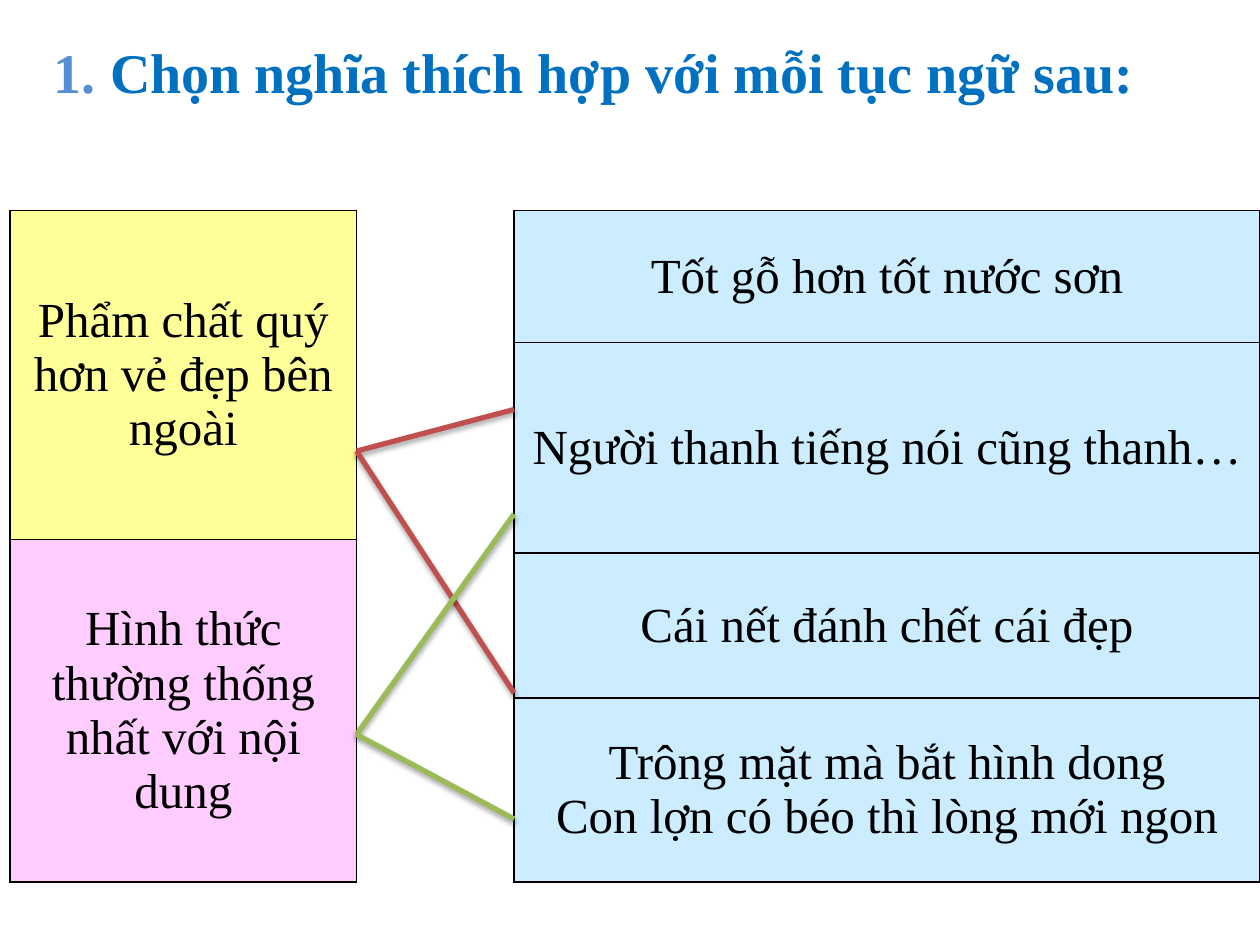
from dataclasses import dataclass

from lxml.etree import SubElement
from pptx import Presentation
from pptx.dml.color import RGBColor
from pptx.enum.shapes import MSO_CONNECTOR as Connector
from pptx.enum.text import MSO_ANCHOR as Anchor, PP_ALIGN as Align
from pptx.oxml import parse_xml
from pptx.oxml.ns import nsdecls, qn
from pptx.util import Inches, Pt


@dataclass(frozen=True)
class Theme:
    """Colours, font and type sizes of the slide."""
    font: str = "Times New Roman"
    title_size: int = 32
    cell_size: int = 28
    number: str = "558ED5"
    title: str = "0070C0"
    ink: str = "000000"
    quality: str = "FFFF99"
    form: str = "FFCCFF"
    proverb: str = "CCECFF"
    quality_line: str = "C0504D"
    form_line: str = "9BBB59"
    border_width: float = 1
    line_width: float = 3


THEME = Theme()
TABLE_TOP = 1.67
MEANING_LEFT, MEANING_WIDTH = 0.08, 2.75
PROVERB_LEFT, PROVERB_WIDTH = 4.08, 5.92

MEANINGS = [
    ("Phẩm chất quý hơn vẻ đẹp bên ngoài", 2.61, THEME.quality),
    ("Hình thức thường thống nhất với nội dung", 2.72, THEME.form),
]
PROVERBS = [
    ("Tốt gỗ hơn tốt nước sơn", 1.05, THEME.proverb),
    ("Người thanh tiếng nói cũng thanh…", 1.67, THEME.proverb),
    ("Cái nết đánh chết cái đẹp", 1.15, THEME.proverb),
    ("Trông mặt mà bắt hình dong\nCon lợn có béo thì lòng mới ngon", 1.46, THEME.proverb),
]
MATCHES = [
    (3.58, (3.25, 5.5), THEME.quality_line),
    (5.83, (4.08, 6.5), THEME.form_line),
]


def style_run(run, size, color, bold=False):
    """Give a run its font, size, colour and weight."""
    run.font.name = THEME.font
    run.font.size = Pt(size)
    run.font.bold = bold
    run.font.color.rgb = RGBColor.from_string(color)


def add_borders(cell):
    """Draw a thin line on each side of a table cell."""
    properties = cell._tc.get_or_add_tcPr()
    for index, side in enumerate(("lnL", "lnR", "lnT", "lnB")):
        border = parse_xml(
            f'<a:{side} {nsdecls("a")} w="{Pt(THEME.border_width)}"><a:solidFill>'
            f'<a:srgbClr val="{THEME.ink}"/></a:solidFill></a:{side}>')
        properties.insert(index, border)


def add_column(slide, left, width, rows):
    """Add a one-column table from (text, height, fill) rows."""
    total = sum(height for _, height, _ in rows)
    frame = slide.shapes.add_table(
        len(rows), 1, Inches(left), Inches(TABLE_TOP), Inches(width), Inches(total))
    table = frame.table
    table.first_row = table.horz_banding = False
    for index, (text, height, fill) in enumerate(rows):
        table.rows[index].height = Inches(height)
        cell = table.cell(index, 0)
        cell.text_frame.text = text
        cell.vertical_anchor = Anchor.MIDDLE
        cell.fill.solid()
        cell.fill.fore_color.rgb = RGBColor.from_string(fill)
        add_borders(cell)
        for paragraph in cell.text_frame.paragraphs:
            paragraph.alignment = Align.CENTER
            for run in paragraph.runs:
                style_run(run, THEME.cell_size, THEME.ink)


def add_title(slide):
    """Add the numbered question above the tables."""
    shape = slide.shapes.add_textbox(Inches(0.33), Inches(0.25), Inches(8.89), Inches(2.17))
    shape.text_frame.word_wrap = True
    paragraph = shape.text_frame.paragraphs[0]
    paragraph.space_before = Pt(3.6)
    for text, color in (("1. ", THEME.number),
                        ("Chọn nghĩa thích hợp với mỗi tục ngữ sau:", THEME.title)):
        run = paragraph.add_run()
        run.text = text
        style_run(run, THEME.title_size, color, bold=True)


def add_match(slide, start_y, end_y, color):
    """Join a meaning to a proverb with a softly shadowed line."""
    line = slide.shapes.add_connector(
        Connector.STRAIGHT, Inches(MEANING_LEFT + MEANING_WIDTH), Inches(start_y),
        Inches(PROVERB_LEFT), Inches(end_y))
    line.line.width = Pt(THEME.line_width)
    line.line.color.rgb = RGBColor.from_string(color)
    effects = SubElement(line._element.spPr, qn("a:effectLst"))
    effects.append(parse_xml(
        f'<a:outerShdw {nsdecls("a")} blurRad="{Pt(3.1)}" dist="{Pt(1.8)}" dir="5400000" '
        f'rotWithShape="0"><a:srgbClr val="{THEME.ink}"><a:alpha val="35000"/>'
        '</a:srgbClr></a:outerShdw>'))


def main():
    """Build the matching exercise and save it."""
    presentation = Presentation()
    presentation.slide_width, presentation.slide_height = Inches(10), Inches(7.5)
    slide = presentation.slides.add_slide(presentation.slide_layouts[6])
    add_column(slide, MEANING_LEFT, MEANING_WIDTH, MEANINGS)
    add_column(slide, PROVERB_LEFT, PROVERB_WIDTH, PROVERBS)
    add_title(slide)
    for start_y, ends, color in MATCHES:
        for end_y in ends:
            add_match(slide, start_y, end_y, color)
    presentation.save("out.pptx")


if __name__ == "__main__":
    main()
